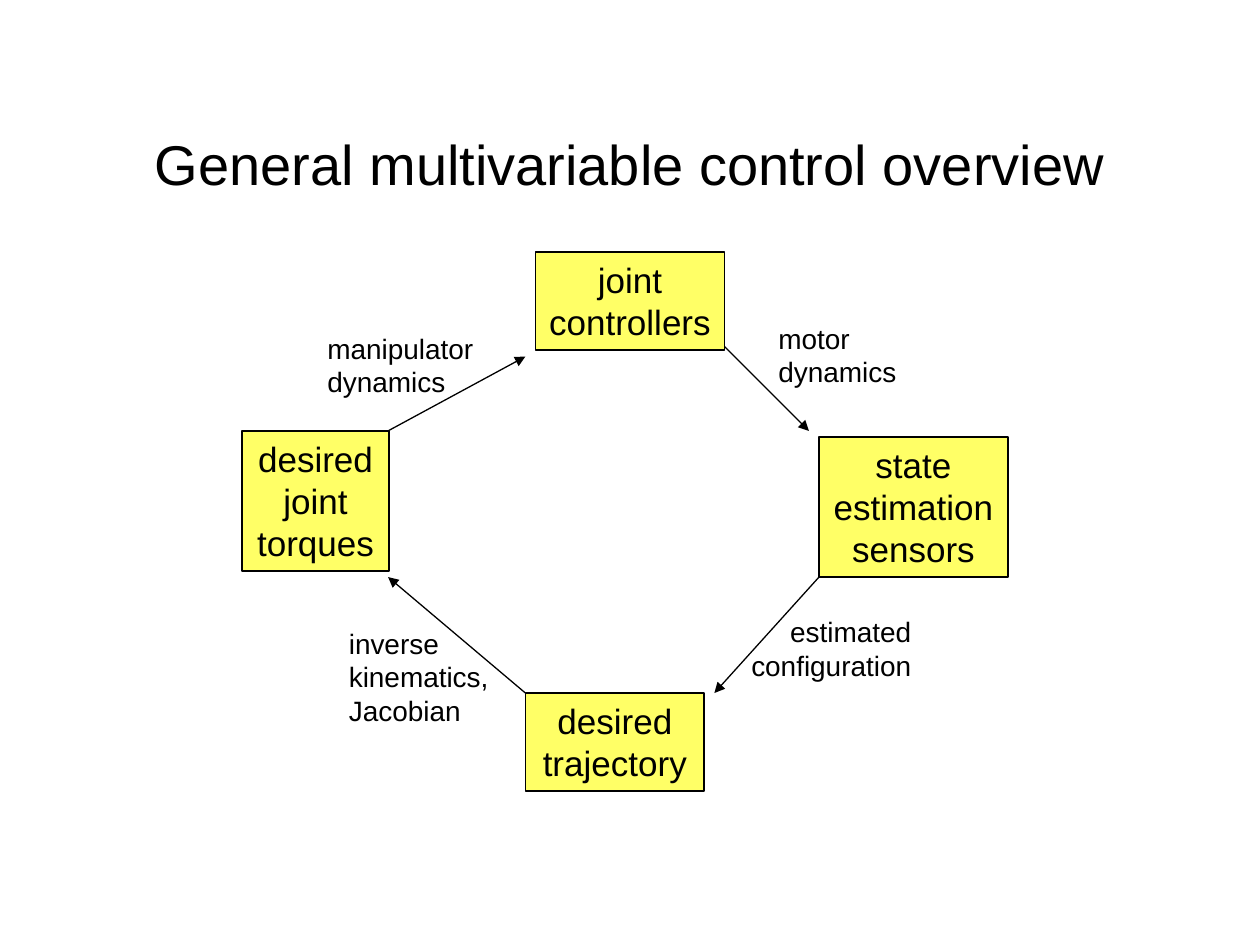
from dataclasses import dataclass

from lxml import etree
from pptx import Presentation
from pptx import util as u
from pptx.dml.color import RGBColor
from pptx.enum import shapes, text
from pptx.oxml import ns


@dataclass(frozen=True)
class Theme:
    font: str = "Arial"
    ink: RGBColor = RGBColor(0x00, 0x00, 0x00)
    box_fill: RGBColor = RGBColor(0xFF, 0xFF, 0x66)
    title_size: int = 32
    box_size: int = 20
    label_size: int = 16
    box_line: float = 1
    arrow_line: float = 0.75


class DiagramBuilder:
    def __init__(self, slide, theme):
        self.slide = slide
        self.theme = theme

    def set_text(self, shape, words, size, align, anchor=text.MSO_ANCHOR.TOP):
        frame = shape.text_frame
        frame.word_wrap = True
        frame.vertical_anchor = anchor
        frame.text = words
        for paragraph in frame.paragraphs:
            paragraph.alignment = align
            paragraph.font.name = self.theme.font
            paragraph.font.size = u.Pt(size)
            paragraph.font.color.rgb = self.theme.ink

    def textbox(self, place, words, size, align, anchor=text.MSO_ANCHOR.TOP):
        shape = self.slide.shapes.add_textbox(*map(u.Inches, place))
        self.set_text(shape, words, size, align, anchor)

    def title(self, place, words):
        self.textbox(place, words, self.theme.title_size,
                     text.PP_ALIGN.CENTER, text.MSO_ANCHOR.MIDDLE)

    def label(self, place, words, align=text.PP_ALIGN.LEFT):
        self.textbox(place, words, self.theme.label_size, align)

    def box(self, place, words):
        shape = self.slide.shapes.add_shape(
            shapes.MSO_SHAPE.RECTANGLE, *map(u.Inches, place))
        shape.shadow.inherit = False
        shape.fill.solid()
        shape.fill.fore_color.rgb = self.theme.box_fill
        shape.line.color.rgb = self.theme.ink
        shape.line.width = u.Pt(self.theme.box_line)
        self.set_text(shape, words, self.theme.box_size, text.PP_ALIGN.CENTER)

    def arrow(self, start, end):
        connector = self.slide.shapes.add_connector(
            shapes.MSO_CONNECTOR.STRAIGHT, *map(u.Inches, start + end))
        connector.line.color.rgb = self.theme.ink
        connector.line.width = u.Pt(self.theme.arrow_line)
        properties = connector._element.spPr
        outline = properties.find(ns.qn("a:ln"))
        etree.SubElement(outline, ns.qn("a:tailEnd"), type="triangle")
        etree.SubElement(properties, ns.qn("a:effectLst"))


def main():
    presentation = Presentation()
    presentation.slide_width = u.Inches(10)
    presentation.slide_height = u.Inches(7.5)
    slide = presentation.slides.add_slide(presentation.slide_layouts[6])
    diagram = DiagramBuilder(slide, Theme())

    diagram.title((0.75, 0.67, 8.5, 1.25), "General multivariable control overview")

    # Stages of the control loop, clockwise from the top
    two_lines, three_lines = 0.78, 1.11
    diagram.box((4.25, 2, 1.5, two_lines), "joint controllers")
    diagram.box((6.5, 3.47, 1.5, three_lines), "state estimation sensors")
    diagram.box((4.17, 5.5, 1.42, two_lines), "desired trajectory")
    diagram.box((1.92, 3.42, 1.17, three_lines), "desired joint torques")

    # Arrows between the stages
    diagram.arrow((5.75, 2.75), (6.42, 3.42))
    diagram.arrow((6.5, 4.58), (5.67, 5.5))
    diagram.arrow((4.17, 5.5), (3.08, 4.58))
    diagram.arrow((3.08, 3.42), (4.17, 2.83))

    # Arrow labels
    label_width, label_height = 1.58, 0.64
    diagram.label((6.08, 2.5, label_width, label_height), "motor dynamics")
    diagram.label((5.75, 4.83, label_width, label_height),
                  "estimated configuration", text.PP_ALIGN.RIGHT)
    diagram.label((2.67, 4.92, label_width, 0.9), "inverse kinematics,\nJacobian")
    diagram.label((2.5, 2.58, label_width, label_height), "manipulator dynamics")

    presentation.save("out.pptx")


if __name__ == "__main__":
    main()
